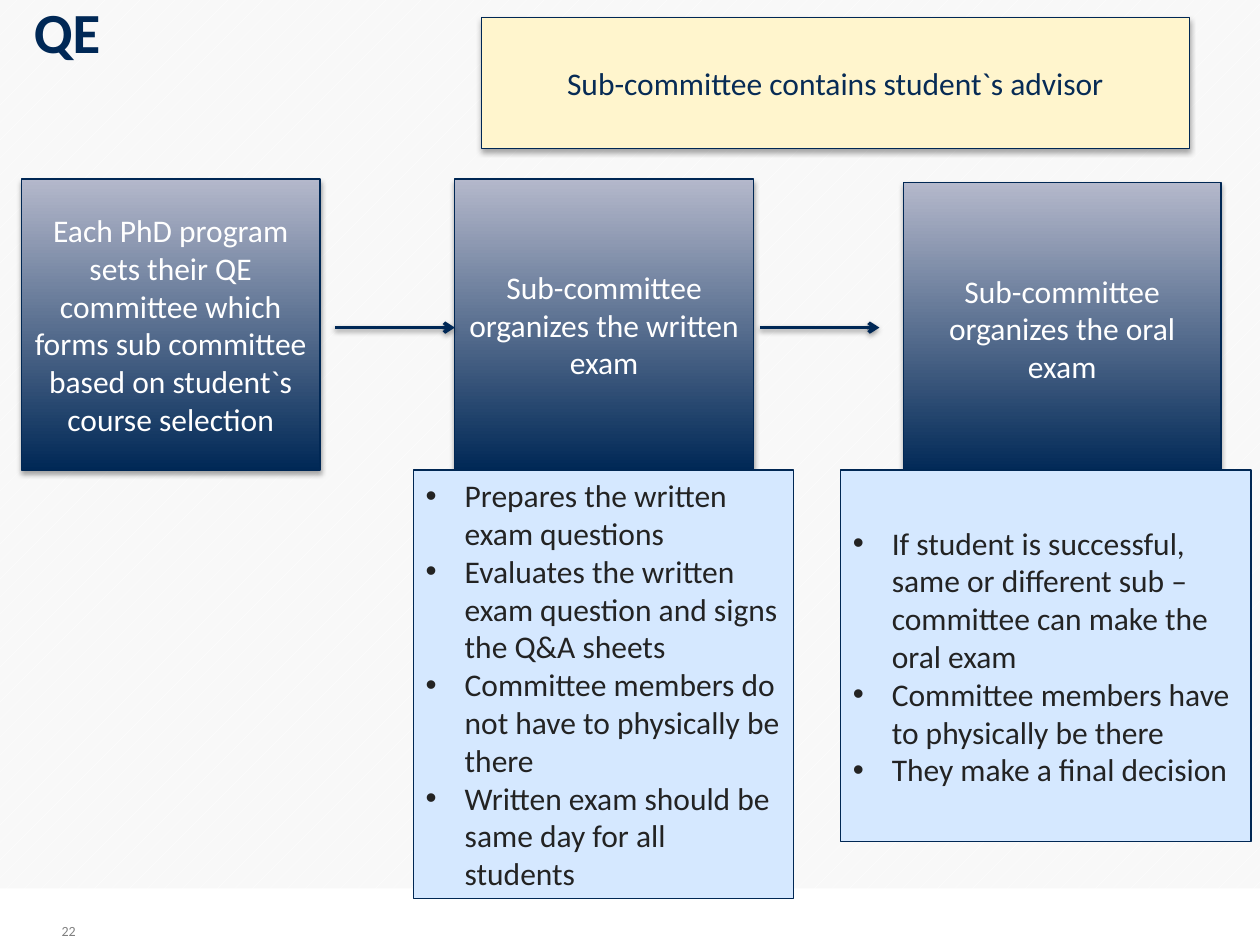
import dataclasses

import lxml.etree
import pptx
import pptx.dml.color
import pptx.enum.dml
import pptx.enum.shapes
import pptx.enum.text
import pptx.oxml.ns
import pptx.util

Inches = pptx.util.Inches
Pt = pptx.util.Pt
qn = pptx.oxml.ns.qn
PP_ALIGN = pptx.enum.text.PP_ALIGN
MSO_ANCHOR = pptx.enum.text.MSO_ANCHOR


@dataclasses.dataclass(frozen=True)
class Theme:
    font: str = "Calibri"
    page: str = "F8F8F8"
    white: str = "FFFFFF"
    navy: str = "002856"
    edge: str = "002754"
    mist: str = "B4B8CB"
    sky: str = "D5E8FF"
    cream: str = "FFF5CD"
    note: str = "072B55"
    ink: str = "232323"
    grey: str = "808080"
    shadow: str = "000000"
    title_size: float = 32.4
    body_size: float = 18
    number_size: float = 8


THEME = Theme()
TITLE = "QE"
NUMBER = "22"
NOTE = "Sub-committee contains student`s advisor"
STEPS = [
    ("Each PhD program sets their QE committee which forms sub committee "
     "based on student`s course selection", (0.17, 1.42, 2.37, 2.31)),
    ("Sub-committee organizes the written exam", (3.61, 1.42, 2.37, 2.31)),
    ("Sub-committee organizes the oral exam", (7.17, 1.45, 2.52, 2.31)),
]
DETAILS = [
    (["Prepares the written exam questions",
      "Evaluates the written exam question and signs the Q&A sheets",
      "Committee members do not have to physically be there",
      "Written exam should be same day for all students"],
     (3.28, 3.73, 3.02, 3.4)),
    (["If student is successful, same or different sub –committee can make the oral exam",
      "Committee members have to physically be there",
      "They make a final decision"],
     (6.67, 3.73, 3.26, 2.95)),
]
ARROW_STARTS = [2.66, 6.03]
ARROW_Y, ARROW_LENGTH = 2.6, 0.95
BULLET_INDENT = 0.31


def rgb(value):
    """Turn a hex string into a colour."""
    return pptx.dml.color.RGBColor.from_string(value)


def add_effects(shape, alpha=None, distance=1.8):
    """Give the shape its own effect list, with a drop shadow if alpha is set."""
    sp_pr = shape._element.spPr
    effects = lxml.etree.SubElement(sp_pr, qn("a:effectLst"))
    if alpha:
        drop = lxml.etree.SubElement(
            effects, qn("a:outerShdw"), blurRad=str(Pt(3.1)), dist=str(Pt(distance)),
            dir="5400000", rotWithShape="0")
        color = lxml.etree.SubElement(drop, qn("a:srgbClr"), val=THEME.shadow)
        lxml.etree.SubElement(color, qn("a:alpha"), val=str(alpha * 1000))


def add_bullet(p):
    """Give the paragraph a round bullet with a hanging indent."""
    p_pr = p._p.get_or_add_pPr()
    p_pr.set("marL", str(Inches(BULLET_INDENT)))
    p_pr.set("indent", str(-Inches(BULLET_INDENT)))
    lxml.etree.SubElement(p_pr, qn("a:buFont"), typeface="Arial")
    lxml.etree.SubElement(p_pr, qn("a:buChar"), char="•")


def write(shape, lines, color, size=THEME.body_size, align=PP_ALIGN.LEFT,
          anchor=MSO_ANCHOR.MIDDLE, bold=False, bullets=False, spacing=None):
    """Fill the shape with one paragraph per line."""
    tf = shape.text_frame
    tf.word_wrap = True
    tf.vertical_anchor = anchor
    for i, line in enumerate(lines):
        p = tf.add_paragraph() if i else tf.paragraphs[0]
        p.text = line
        p.alignment = align
        if spacing:
            p.line_spacing = spacing
        if bullets:
            add_bullet(p)
        p.font.name = THEME.font
        p.font.size = Pt(size)
        p.font.bold = bold
        p.font.color.rgb = rgb(color)


def add_box(s, at, fill, edge=THEME.edge, shadow=None):
    """Add a rectangle, with a vertical gradient when fill is a pair."""
    box = s.shapes.add_shape(
        pptx.enum.shapes.MSO_SHAPE.RECTANGLE, *map(Inches, at))
    if isinstance(fill, tuple):
        box.fill.gradient()
        box.fill.gradient_angle = 90
        for stop, color in zip(box.fill.gradient_stops, fill):
            stop.color.rgb = rgb(color)
    else:
        box.fill.solid()
        box.fill.fore_color.rgb = rgb(fill)
    if edge:
        box.line.color.rgb = rgb(edge)
        box.line.width = Pt(0.75)
    else:
        box.line.fill.background()
    add_effects(box, shadow)
    return box


def add_arrow(s, x):
    """Add a rightward arrow starting at x."""
    arrow = s.shapes.add_connector(
        pptx.enum.shapes.MSO_CONNECTOR.STRAIGHT,
        *map(Inches, (x, ARROW_Y, x + ARROW_LENGTH, ARROW_Y)))
    arrow.line.color.rgb = rgb(THEME.navy)
    arrow.line.width = Pt(2)
    lxml.etree.SubElement(arrow.line._get_or_add_ln(), qn("a:tailEnd"), type="arrow")
    add_effects(arrow, 38, 1.6)


def main():
    """Build the qualifying exam slide."""
    prs = pptx.Presentation()
    prs.slide_width, prs.slide_height = Inches(10), Inches(7.5)
    s = prs.slides.add_slide(prs.slide_layouts[6])
    page = s.background.fill
    page.patterned()
    page.pattern = pptx.enum.dml.MSO_PATTERN.PERCENT_5
    page.fore_color.rgb = rgb(THEME.white)
    page.back_color.rgb = rgb(THEME.page)

    add_box(s, (0, 7.05, 10, 0.45), THEME.white, edge=None)
    number = s.shapes.add_textbox(*map(Inches, (0.39, 7.15, 0.36, 0.35)))
    write(number, [NUMBER], THEME.grey, THEME.number_size, anchor=MSO_ANCHOR.BOTTOM)
    title = s.shapes.add_textbox(*map(Inches, (0.17, 0.01, 8.97, 0.55)))
    write(title, [TITLE], THEME.navy, THEME.title_size,
          anchor=MSO_ANCHOR.BOTTOM, bold=True, spacing=0.8)

    for text, at in STEPS:
        box = add_box(s, at, (THEME.navy, THEME.mist), shadow=35)
        write(box, [text], THEME.white, align=PP_ALIGN.CENTER)
    for x in ARROW_STARTS:
        add_arrow(s, x)
    for lines, at in DETAILS:
        write(add_box(s, at, THEME.sky), lines, THEME.ink, bullets=True)
    note = add_box(s, (3.82, 0.14, 5.62, 1.04), THEME.cream, shadow=35)
    write(note, [NOTE], THEME.note, align=PP_ALIGN.CENTER)

    prs.save("out.pptx")


if __name__ == "__main__":
    main()
